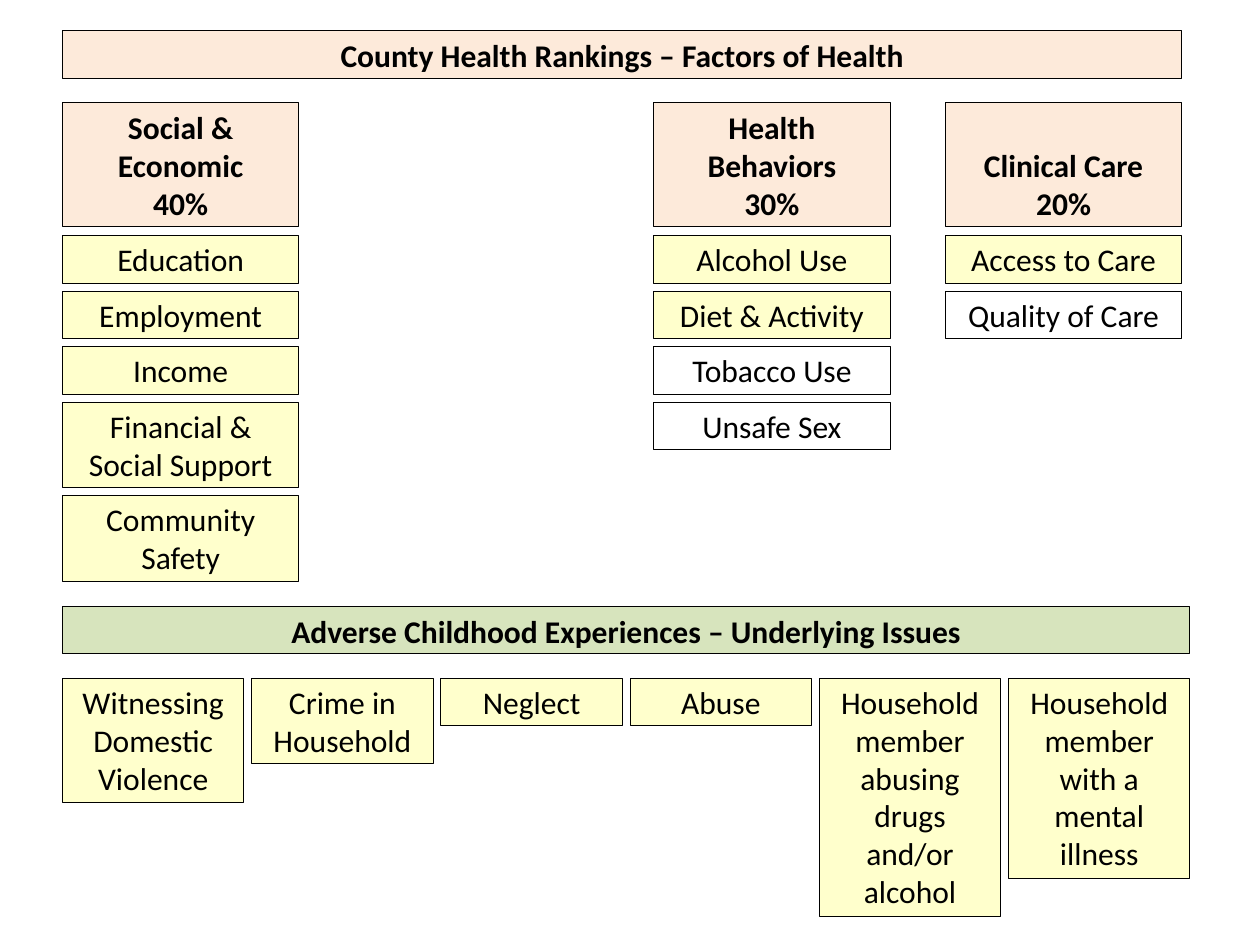
"""Build the slide relating county health factors to adverse childhood experiences."""
from pptx import Presentation
from pptx import util as u
from pptx.dml.color import RGBColor
from pptx.enum import shapes, text

PEACH, GREEN, YELLOW = "FDEADA", "D7E4BD", "FFFFCC"
LEFT, COL_W, GAP = 47.5, 180, 6


def rgb(value):
    return RGBColor.from_string(value)


def add_box(x, y, w, lines, content, fill=None, bold=False):
    h = 7.2 + 29.05 * lines
    sp = s.shapes.add_shape(shapes.MSO_SHAPE.RECTANGLE, u.Pt(x), u.Pt(y), u.Pt(w), u.Pt(h))
    sp.shadow.inherit = False
    if fill:
        sp.fill.solid()
        sp.fill.fore_color.rgb = rgb(fill)
    else:
        sp.fill.background()
    sp.line.color.rgb = rgb("000000")
    sp.line.width = u.Pt(0.75)
    tf = sp.text_frame
    tf.word_wrap = True
    tf.vertical_anchor = text.MSO_ANCHOR.BOTTOM if bold else text.MSO_ANCHOR.TOP
    tf.text = content
    for p in tf.paragraphs:
        p.alignment = text.PP_ALIGN.CENTER
        p.font.name = "Calibri"
        p.font.size = u.Pt(24)
        p.font.bold = bold
        p.font.color.rgb = rgb("000000")
    return h


prs = Presentation()
prs.slide_width, prs.slide_height = u.Pt(959), u.Pt(719.3)
s = prs.slides.add_slide(prs.slide_layouts[6])

add_box(LEFT, 23.5, 852, 1, "County Health Rankings – Factors of Health", PEACH, True)
add_box(LEFT, 461.5, 858.2, 1, "Adverse Childhood Experiences – Underlying Issues", GREEN, True)

factors = [
    (LEFT, "Social & Economic\n40%", [
        ("Education", 1, YELLOW), ("Employment", 1, YELLOW), ("Income", 1, YELLOW),
        ("Financial & Social Support", 2, YELLOW), ("Community Safety", 2, YELLOW)]),
    (497.5, "Health Behaviors\n30%", [
        ("Alcohol Use", 1, YELLOW), ("Diet & Activity", 1, YELLOW),
        ("Tobacco Use", 1, None), ("Unsafe Sex", 1, None)]),
    (719.5, "Clinical Care\n20%", [
        ("Access to Care", 1, YELLOW), ("Quality of Care", 1, None)]),
]
for x, heading, items in factors:
    add_box(x, 78, COL_W, 3, heading, PEACH, True)
    y = 179.3
    for label, lines, fill in items:
        y += add_box(x, y, COL_W, lines, label, fill) + GAP

experiences = [
    ("Witnessing Domestic Violence", 3),
    ("Crime in Household", 2),
    ("Neglect", 1),
    ("Abuse", 1),
    ("Household member abusing drugs and/or alcohol", 6),
    ("Household member with a mental illness", 5),
]
for i, (label, lines) in enumerate(experiences):
    add_box(LEFT + 144 * i, 516.2, 138.2, lines, label, YELLOW)

prs.save("out.pptx")
